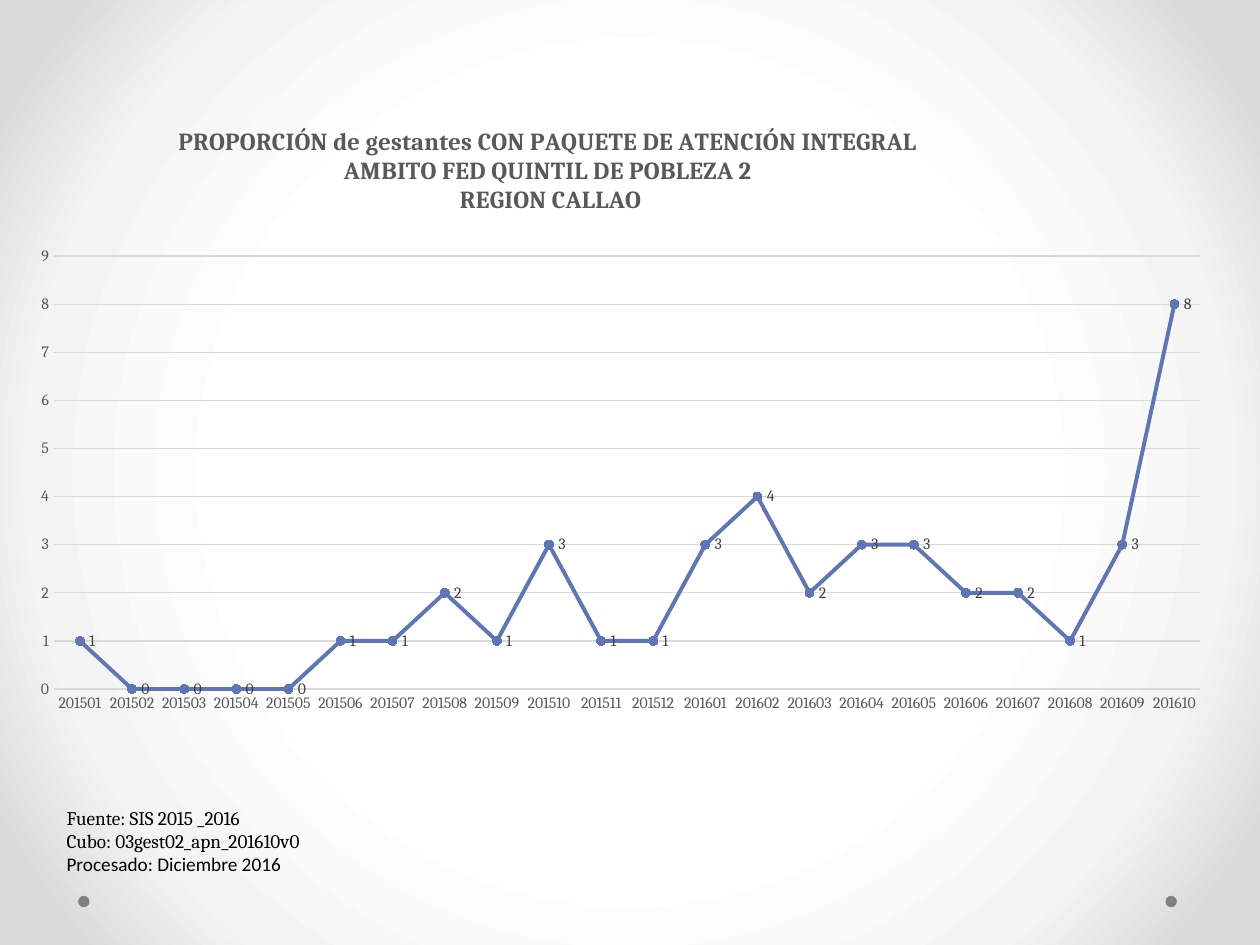
from dataclasses import dataclass

from lxml import etree
from pptx import Presentation
from pptx.chart.data import CategoryChartData
from pptx.dml.color import RGBColor
from pptx.enum.chart import XL_CHART_TYPE, XL_LABEL_POSITION, XL_MARKER_STYLE, XL_TICK_MARK
from pptx.enum.shapes import MSO_SHAPE
from pptx.enum.text import MSO_AUTO_SIZE, PP_ALIGN
from pptx.oxml import parse_xml
from pptx.oxml.ns import qn
from pptx.util import Inches, Pt

LINE_MARKERS = XL_CHART_TYPE.LINE_MARKERS
LABEL_RIGHT = XL_LABEL_POSITION.RIGHT
CIRCLE = XL_MARKER_STYLE.CIRCLE
NO_TICK = XL_TICK_MARK.NONE
OVAL = MSO_SHAPE.OVAL
FIT_SHAPE = MSO_AUTO_SIZE.SHAPE_TO_FIT_TEXT
CENTER = PP_ALIGN.CENTER
A_NS = "http://schemas.openxmlformats.org/drawingml/2006/main"


@dataclass(frozen=True)
class Theme:
    serif: str = "Cambria"
    sans: str = "Calibri"
    text: str = "000000"
    muted: str = "595959"
    label: str = "404040"
    grid: str = "D9D9D9"
    series: str = "6076B4"
    dot: str = "808080"
    backdrop: tuple = ((50, "FFFFFF"), (76, "F4F4F4"), (92, "DADADA"))
    title_size: int = 14
    note_size: int = 11
    chart_size: int = 10
    axis_size: int = 9


def rgb(value):
    return RGBColor.from_string(value)


def set_font(font, name, size, color, bold=False):
    font.name, font.size, font.bold = name, Pt(size), bold
    font.color.rgb = rgb(color)


def set_line(line, color, width):
    line.color.rgb = rgb(color)
    line.width = Pt(width)


def set_layout(element, **fractions):
    """Place a chart part by fractions of the chart area."""
    layout = element.find(qn("c:layout"))
    if layout is None:
        layout = etree.Element(qn("c:layout"))
        element.insert(0, layout)
    manual = etree.SubElement(layout, qn("c:manualLayout"))
    if "w" in fractions:
        etree.SubElement(manual, qn("c:layoutTarget")).set("val", "inner")
    for axis in "xy":
        etree.SubElement(manual, qn(f"c:{axis}Mode")).set("val", "edge")
    for key, value in fractions.items():
        etree.SubElement(manual, qn(f"c:{key}")).set("val", str(value))


class SlideBuilder:
    def __init__(self, s, theme):
        self.s = s
        self.theme = theme

    def backdrop(self):
        self.s.background.fill.gradient()
        stops = "".join(
            f'<a:gs pos="{pos * 1000}"><a:srgbClr val="{color}"/></a:gs>'
            for pos, color in self.theme.backdrop)
        radial = parse_xml(
            f'<a:gradFill xmlns:a="{A_NS}" rotWithShape="1"><a:gsLst>{stops}</a:gsLst>'
            '<a:path path="circle"><a:fillToRect l="50000" t="50000" r="50000" b="50000"/>'
            '</a:path></a:gradFill>')
        linear = next(self.s._element.iter(qn("a:gradFill")))
        linear.getparent().replace(linear, radial)

    def dot(self, left, top, size):
        sp = self.s.shapes.add_shape(
            OVAL, Inches(left), Inches(top), Inches(size), Inches(size))
        sp.shadow.inherit = False
        sp.fill.solid()
        sp.fill.fore_color.rgb = rgb(self.theme.dot)
        sp.line.fill.background()

    def note(self, box, lines):
        tf = self.s.shapes.add_textbox(*map(Inches, box)).text_frame
        tf.word_wrap = True
        tf.auto_size = FIT_SHAPE
        for i, (text, face) in enumerate(lines):
            p = tf.paragraphs[0] if i == 0 else tf.add_paragraph()
            r = p.add_run()
            r.text = text
            set_font(r.font, face, self.theme.note_size, self.theme.text)

    def line_chart(self, box, title, cats, vals):
        t = self.theme
        data = CategoryChartData(number_format="0")
        data.categories = cats
        data.add_series("Series 1", vals)
        chart = self.s.shapes.add_chart(LINE_MARKERS, *map(Inches, box), data).chart
        set_font(chart.font, t.serif, t.chart_size, t.text)
        chart.has_legend = False
        self._title(chart, title)
        self._axes(chart)
        self._series(chart.plots[0])
        plot_area = next(chart._chartSpace.iter(qn("c:plotArea")))
        set_layout(plot_area, x=0.03, y=0.23, w=0.95, h=0.71)

    def _title(self, chart, lines):
        t = self.theme
        chart.has_title = True
        tf = chart.chart_title.text_frame
        for i, text in enumerate(lines):
            p = tf.paragraphs[0] if i == 0 else tf.add_paragraph()
            p.alignment = CENTER
            r = p.add_run()
            r.text = text
            set_font(r.font, t.serif, t.title_size, t.muted, bold=True)
        set_layout(chart.chart_title._element, x=0.13, y=0.01)

    def _axes(self, chart):
        t = self.theme
        cat, val = chart.category_axis, chart.value_axis
        for axis in (cat, val):
            axis.major_tick_mark = axis.minor_tick_mark = NO_TICK
            set_font(axis.tick_labels.font, t.serif, t.axis_size, t.muted)
        set_line(cat.format.line, t.grid, 0.75)
        val.format.line.fill.background()
        val.minimum_scale, val.maximum_scale, val.major_unit = 0, 9, 1
        val.has_major_gridlines = True
        set_line(val.major_gridlines.format.line, t.grid, 0.75)
        val.tick_labels.number_format = "0"
        val.tick_labels.number_format_is_linked = False

    def _series(self, plot):
        t = self.theme
        plot.vary_by_categories = False
        series = plot.series[0]
        series.smooth = False
        set_line(series.format.line, t.series, 2.25)
        marker = series.marker
        marker.style, marker.size = CIRCLE, 5
        marker.format.fill.solid()
        marker.format.fill.fore_color.rgb = rgb(t.series)
        set_line(marker.format.line, t.series, 0.75)
        labels = series.data_labels
        labels.show_value = True
        labels.position = LABEL_RIGHT
        labels.number_format = "0"
        labels.number_format_is_linked = False
        set_font(labels.font, t.serif, t.axis_size, t.label)


def main():
    prs = Presentation()
    prs.slide_width, prs.slide_height = Inches(10), Inches(7.5)
    theme = Theme()
    slide = SlideBuilder(prs.slides.add_slide(prs.slide_layouts[6]), theme)

    slide.backdrop()
    for left in (9.25, 0.62):
        slide.dot(left, 7.11, 0.09)
    slide.note((0.43, 6.35, 3.23, 0.84), [
        ("Fuente: SIS 2015 _2016", theme.serif),
        ("Cubo: 03gest02_apn_201610v0", theme.serif),
        ("Procesado: Diciembre 2016", theme.sans),
    ])
    months = [f"{year}{month:02}" for year, last in ((2015, 12), (2016, 10))
              for month in range(1, last + 1)]
    slide.line_chart(
        (0.14, 0.92, 9.58, 4.84),
        ["PROPORCIÓN de gestantes CON PAQUETE DE ATENCIÓN INTEGRAL ",
         "AMBITO FED QUINTIL DE POBLEZA 2 ",
         "REGION CALLAO"],
        months,
        [1, 0, 0, 0, 0, 1, 1, 2, 1, 3, 1, 1, 3, 4, 2, 3, 3, 2, 2, 1, 3, 8])
    prs.save("out.pptx")


if __name__ == "__main__":
    main()
